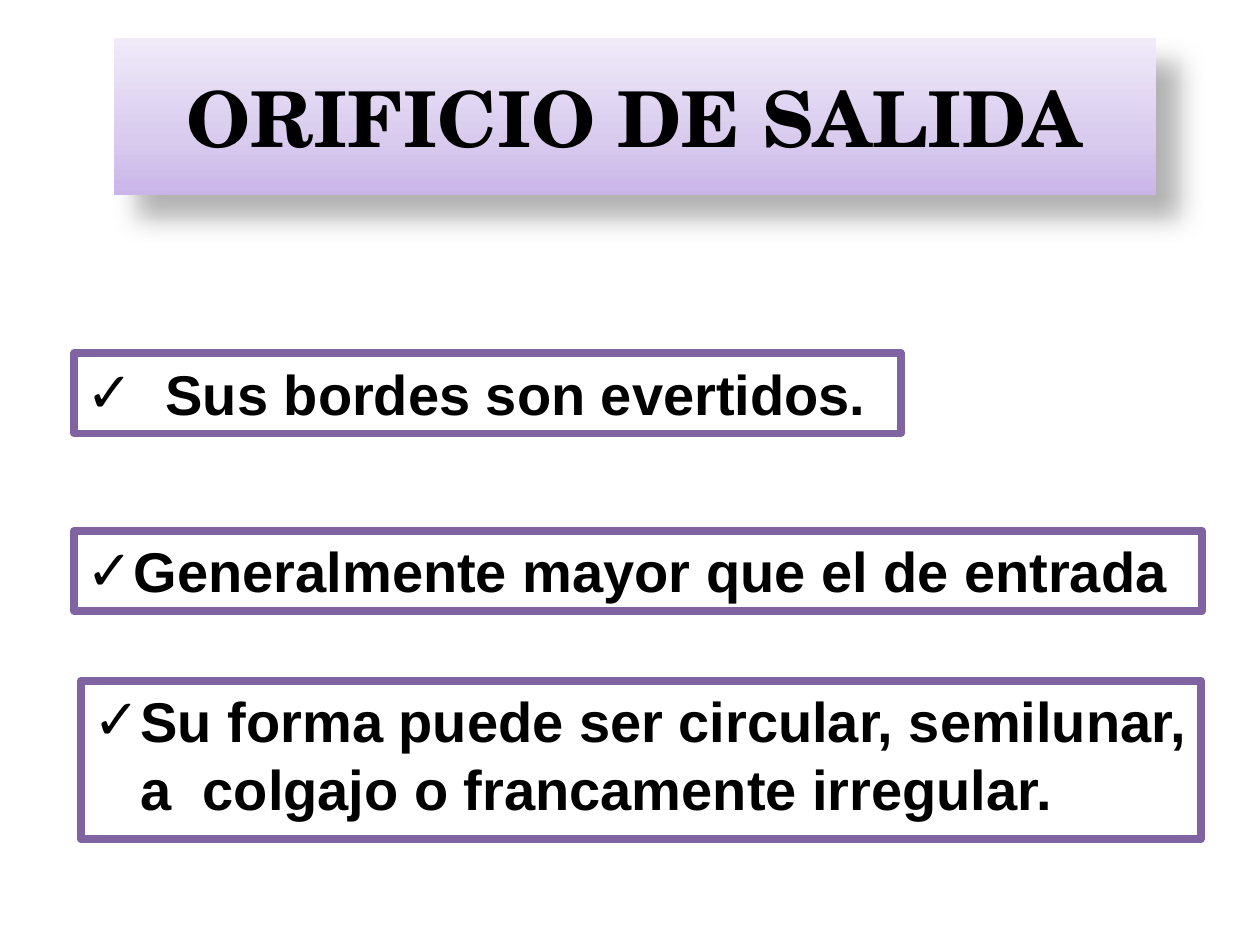
from lxml import etree
from pptx import Presentation, util as u
from pptx.dml.color import RGBColor
from pptx.enum import text
from pptx.oxml import parse_xml
from pptx.oxml.ns import qn

NS = 'xmlns:a="http://schemas.openxmlformats.org/drawingml/2006/main"'


def paint(fill, tone):
    """Give a fill one solid colour."""
    fill.solid()
    fill.fore_color.rgb = RGBColor.from_string(tone)


def place(shape, left, top, width, height):
    """Set the place and size of a shape in centimetres."""
    shape.left, shape.top = u.Cm(left), u.Cm(top)
    shape.width, shape.height = u.Cm(width), u.Cm(height)


def style(para, face, size):
    """Set bold black text on a paragraph."""
    font = para.font
    font.name, font.size, font.bold = face, u.Pt(size), True
    paint(font.fill, "000000")


def shade(shape, stops):
    """Add an upward gradient and a soft shadow."""
    marks = "".join(
        f'<a:gs pos="{pos * 1000}"><a:srgbClr val="{tone}"/></a:gs>'
        for pos, tone in stops)
    props = shape.element.spPr
    props.append(parse_xml(
        f'<a:gradFill {NS} rotWithShape="1"><a:gsLst>{marks}</a:gsLst>'
        '<a:lin ang="16200000" scaled="0"/></a:gradFill>'))
    props.append(parse_xml(
        f'<a:effectLst {NS}><a:outerShdw blurRad="{u.Pt(15)}" '
        f'dist="{u.Pt(18)}" dir="2700000" algn="tl" rotWithShape="0">'
        '<a:srgbClr val="000000"><a:alpha val="30000"/></a:srgbClr>'
        '</a:outerShdw></a:effectLst>'))


def check(para, indent):
    """Give a paragraph a check mark and a hanging indent."""
    props = para._p.get_or_add_pPr()
    props.set("marL", str(u.Cm(indent)))
    props.set("indent", str(-u.Cm(indent)))
    mark = etree.Element(qn("a:buFont"), typeface="Arial")
    sign = etree.Element(qn("a:buChar"), char="✓")
    props[:0] = [mark, sign]


def frame(shape, words, indent):
    """Fill a purple-edged box with one checked line."""
    paint(shape.fill, "FFFFFF")
    paint(shape.line.fill, "8064A2")
    shape.line.width = u.Pt(4.5)
    para = shape.text_frame.paragraphs[0]
    para.text = words
    check(para, indent)
    style(para, "Arial", 32)


def note(slide, top, width, words, indent):
    """Add a framed text box that fits one line."""
    box = slide.shapes.add_textbox(
        u.Cm(1.5), u.Cm(top), u.Cm(width), u.Cm(1.62))
    box.text_frame.word_wrap = False
    box.text_frame.auto_size = text.MSO_AUTO_SIZE.SHAPE_TO_FIT_TEXT
    frame(box, words, indent)


def main():
    """Build the slide and save it."""
    deck = Presentation()
    deck.slide_width, deck.slide_height = u.Cm(25.4), u.Cm(19.05)
    slide = deck.slides.add_slide(deck.slide_layouts[1])

    title, body = slide.placeholders
    place(title, 2.3, 0.77, 21, 3.17)
    shade(title, [(0, "C9B5E8"), (35, "D8CBEE"), (100, "F0EAF9")])
    head = title.text_frame.paragraphs[0]
    head.text = "ORIFICIO DE SALIDA"
    head.alignment = text.PP_ALIGN.CENTER
    style(head, "TeX Gyre Schola", 44)

    place(body, 1.63, 13.72, 22.58, 3.2)
    body.text_frame.auto_size = text.MSO_AUTO_SIZE.NONE
    frame(body, "Su forma puede ser circular, semilunar, "
                "a  colgajo o francamente irregular.", 0.95)

    note(slide, 7.12, 16.66, "Sus bordes son evertidos.", 1.59)
    note(slide, 10.7, 22.73, "Generalmente mayor que el de entrada", 0.79)
    deck.save("out.pptx")


if __name__ == "__main__":
    main()
